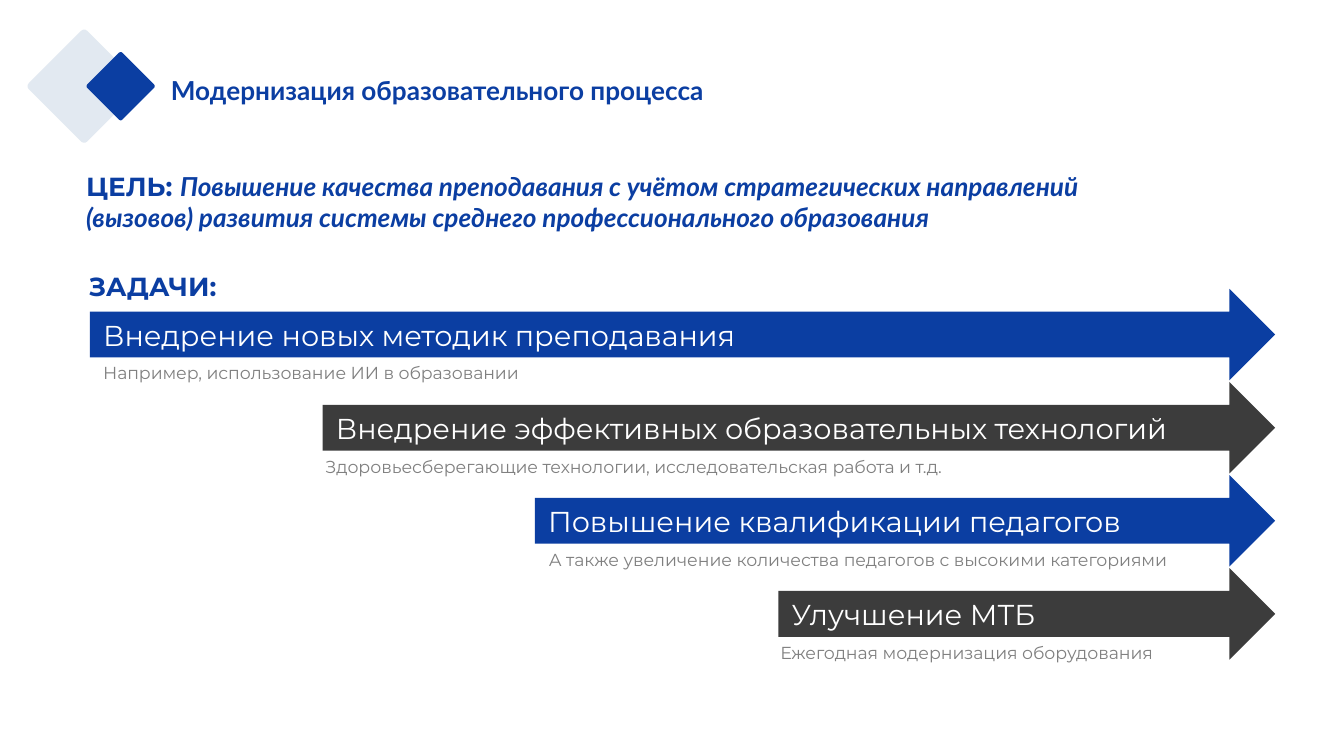
from pptx import Presentation
from pptx.dml.color import RGBColor
from pptx.enum.shapes import MSO_SHAPE
from pptx.enum.text import MSO_ANCHOR, MSO_AUTO_SIZE, PP_ALIGN
from pptx.util import Cm, Pt

BLUE, DARK, PALE, GREY, WHITE = "0B3EA2", "3C3C3C", "E2E9F1", "808080", "FFFFFF"
HEAD_FONT, BODY_FONT = "Lato", "Montserrat"

# arrow left, heading, note left, note width, note, note alignment (cm)
TASKS = [
    (1.7, "Внедрение новых методик преподавания",
     1.7, 9.8, "Например, использование ИИ в образовании", PP_ALIGN.LEFT),
    (6.1, "Внедрение эффективных образовательных технологий",
     5.9, 13, "Здоровьесберегающие технологии, исследовательская работа и т.д.",
     PP_ALIGN.LEFT),
    (10.11, "Повышение квалификации педагогов",
     9.7, 13.03, "А также увеличение количества педагогов с высокими категориями",
     PP_ALIGN.CENTER),
    (14.71, "Улучшение МТБ",
     14.5, 8.43, "Ежегодная модернизация оборудования", PP_ALIGN.LEFT),
]


def color(hex_string):
    return RGBColor.from_string(hex_string)


def style(font, name, size, hex_color, bold=False):
    font.name, font.size, font.bold = name, Pt(size), bold
    font.color.rgb = color(hex_color)


def paint(sp, hex_color):
    sp.shadow.inherit = False
    sp.fill.solid()
    sp.fill.fore_color.rgb = color(hex_color)
    sp.line.fill.background()


def prepare_heading(tf):
    """Remove side insets, centre vertically and return the first paragraph."""
    tf.word_wrap = True
    tf.auto_size = MSO_AUTO_SIZE.NONE
    tf.vertical_anchor = MSO_ANCHOR.MIDDLE
    tf.margin_left = tf.margin_right = 0
    p = tf.paragraphs[0]
    p.alignment = PP_ALIGN.LEFT
    return p


def add_diamond(shapes, center_x, center_y, side, hex_color):
    sp = shapes.add_shape(MSO_SHAPE.ROUNDED_RECTANGLE, Cm(center_x - side / 2),
                          Cm(center_y - side / 2), Cm(side), Cm(side))
    sp.adjustments[0] = 0.05
    sp.rotation = 45
    paint(sp, hex_color)


def add_header(s, left, top, width, height):
    """Place the two diamonds and the slide title beside them."""
    middle = top + height / 2
    group = s.shapes.add_group_shape()
    add_diamond(group.shapes, left + 1.08, middle, 1.56, PALE)
    add_diamond(group.shapes, left + 1.77, middle, 0.94, BLUE)

    title = s.shapes.title
    title.left, title.top = Cm(left + 2.72), Cm(middle - 0.45)
    title.width, title.height = Cm(width - 2.72), Cm(1.06)
    p = prepare_heading(title.text_frame)
    p.text = "Модернизация образовательного процесса"
    style(p.font, HEAD_FONT, 14, BLUE, bold=True)


def add_statement(s, left, top, width, height, label, text=""):
    sp = s.shapes.add_textbox(Cm(left), Cm(top), Cm(width), Cm(height))
    p = prepare_heading(sp.text_frame)
    r = p.add_run()
    r.text = label
    style(r.font, BODY_FONT, 14, BLUE, bold=True)
    if text:
        r = p.add_run()
        r.text = text
        style(r.font, HEAD_FONT, 14, BLUE, bold=True)
        r.font.italic = True


def add_task(s, top, right, height, hex_color, task):
    """Place one arrow with its note below, ending at the right edge."""
    left, heading, note_left, note_width, note, alignment = task
    shapes = s.shapes.add_group_shape().shapes

    sp = shapes.add_textbox(Cm(note_left), Cm(top + 1.27), Cm(note_width), Cm(1.09))
    sp.text_frame.word_wrap = True
    p = sp.text_frame.paragraphs[0]
    p.text, p.alignment = note, alignment
    style(p.font, BODY_FONT, 9.3, GREY)

    sp = shapes.add_shape(MSO_SHAPE.RIGHT_ARROW, Cm(left), Cm(top),
                          Cm(right - left), Cm(height))
    paint(sp, hex_color)
    tf = sp.text_frame
    tf.word_wrap = False
    tf.vertical_anchor = MSO_ANCHOR.MIDDLE
    p = tf.paragraphs[0]
    p.text, p.alignment = heading, PP_ALIGN.LEFT
    style(p.font, BODY_FONT, 15.4, WHITE)


def add_tasks(s, top, right, pitch):
    for i, task in enumerate(TASKS):
        add_task(s, top + i * pitch, right, 1.73, (BLUE, DARK)[i % 2], task)


def main():
    prs = Presentation()
    prs.slide_width, prs.slide_height = Cm(25.4), Cm(14.29)
    s = prs.slides.add_slide(prs.slide_layouts[5])
    add_tasks(s, 5.46, 24.1, 1.76)
    add_header(s, 0.51, 0.56, 22.99, 2.14)
    add_statement(s, 1.63, 2.87, 20.27, 1.88, "ЦЕЛЬ: ",
                  "Повышение качества преподавания с учётом стратегических направлений "
                  "(вызовов) развития системы среднего профессионального образования")
    add_statement(s, 1.68, 4.47, 20.27, 1.88, "ЗАДАЧИ:")
    prs.save("out.pptx")


if __name__ == "__main__":
    main()
